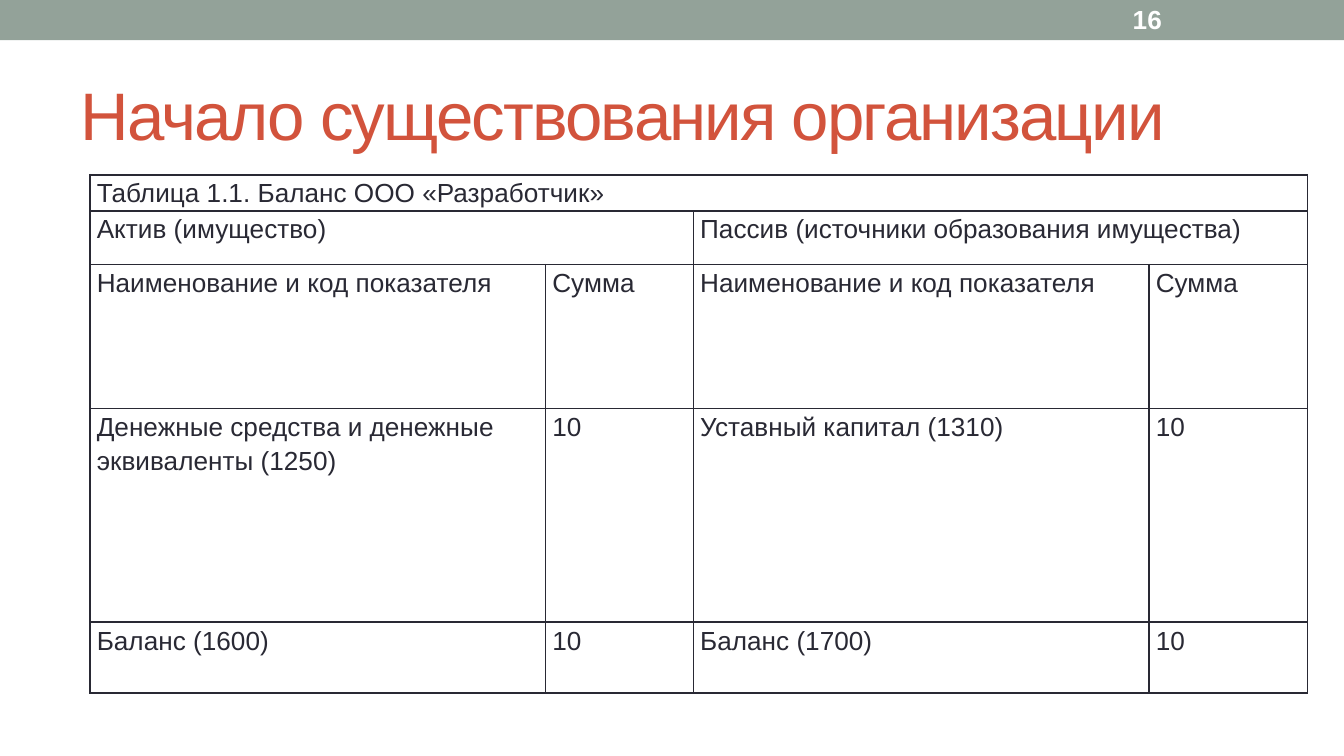
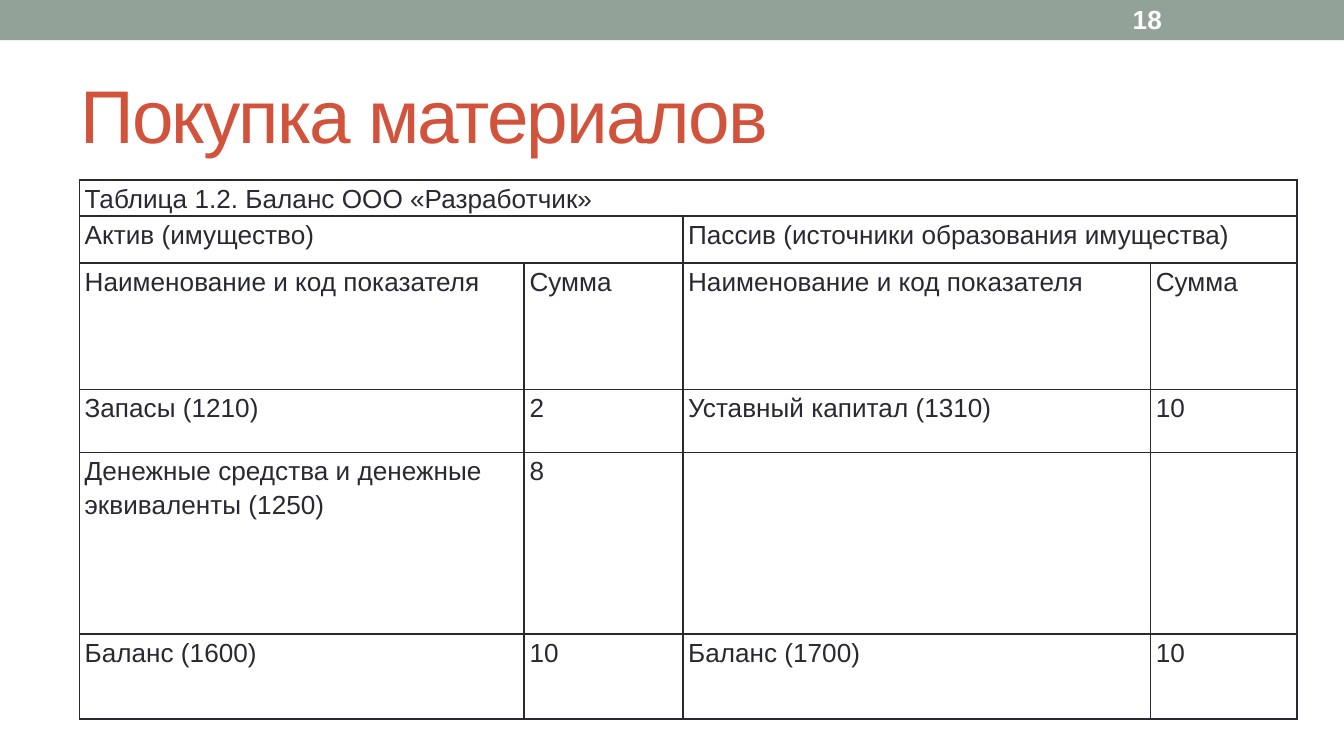
from lxml.etree import SubElement
from pptx import Presentation
from pptx.dml.color import RGBColor
from pptx.enum.shapes import MSO_SHAPE as SHAPE
from pptx.enum.text import MSO_ANCHOR as ANCHOR
from pptx.oxml.ns import qn
from pptx.util import Inches, Pt

BAND = RGBColor(0x93, 0xA2, 0x99)
ACCENT = RGBColor(0xD2, 0x53, 0x3C)
DARK = RGBColor(0x29, 0x29, 0x34)
WHITE = RGBColor(0xFF, 0xFF, 0xFF)
FONT = "Arial"

HEADINGS = ["Актив (имущество)", "", "Пассив (источники образования имущества)", ""]
COLUMNS = ["Наименование и код показателя", "Сумма"] * 2
CASH = "Денежные средства и денежные эквиваленты (1250)"
CAPITAL = ["Уставный капитал (1310)", "10"]
TOTALS = ["Баланс (1600)", "10", "Баланс (1700)", "10"]

# The caption row is set low and grows to fit its text
SLIDES = [
    {
        "number": "16", "title": "Начало существования организации", "size": 36,
        "caption": "Таблица 1.1. Баланс ООО «Разработчик»",
        "box": (0.67, 1.3, 9.06, 3.86), "inset": 0.05,
        "widths": [3.39, 1.1, 3.39, 1.18],
        "heights": [0.13, 0.4, 1.07, 1.59, 0.53],
        "items": [[CASH, "10", *CAPITAL]],
    },
    {
        "number": "18", "title": "Покупка материалов", "size": 40,
        "caption": "Таблица 1.2. Баланс ООО «Разработчик»",
        "box": (0.59, 1.34, 9.06, 4.01), "inset": 0.04,
        "widths": [3.31, 1.18, 3.48, 1.09],
        "heights": [0, 0.35, 0.94, 0.47, 1.35, 0.63],
        "items": [["Запасы (1210)", "2", *CAPITAL], [CASH, "8", "", ""]],
    },
]


def add_text(s, box, text, size, color, bold=False):
    tf = s.shapes.add_textbox(*map(Inches, box)).text_frame
    tf.word_wrap = True
    tf.vertical_anchor = ANCHOR.MIDDLE
    tf.text = text
    r = tf.paragraphs[0].runs[0]
    r.font.name, r.font.size, r.font.bold = FONT, Pt(size), bold
    r.font.color.rgb = color
    return r


def format_cell(cell, inset):
    cell.margin_left = cell.margin_right = Inches(inset)
    cell.margin_top = cell.margin_bottom = 0
    p = cell.text_frame.paragraphs[0]
    p.line_spacing, p.space_after = 1.15, Pt(10)
    for r in p.runs:
        r.font.name, r.font.size = FONT, Pt(14)
        r.font.color.rgb = DARK
    # Borders come before the fill in the cell properties
    tcPr = cell._tc.get_or_add_tcPr()
    for side in ("a:lnL", "a:lnR", "a:lnT", "a:lnB"):
        ln = SubElement(tcPr, qn(side), w=str(Pt(1)))
        SubElement(SubElement(ln, qn("a:solidFill")), qn("a:srgbClr"), val=str(DARK))
    cell.fill.background()


# Widescreen, 16:9
prs = Presentation()
prs.slide_width = Inches(10)
prs.slide_height = Inches(10) * 9 // 16

for data in SLIDES:
    s = prs.slides.add_slide(prs.slide_layouts[6])

    # Top band
    sp = s.shapes.add_shape(SHAPE.RECTANGLE, 0, 0, prs.slide_width, Inches(0.3))
    sp.shadow.inherit = False
    sp.fill.solid()
    sp.fill.fore_color.rgb = BAND
    sp.line.fill.background()

    # Title with tightened letters
    r = add_text(s, (0.5, 0.44, 9, 0.81), data["title"], data["size"], ACCENT)
    r.font._element.set("spc", "-100")

    # Balance sheet
    rows = [[data["caption"], "", "", ""], HEADINGS, COLUMNS, *data["items"], TOTALS]
    widths, heights = data["widths"], data["heights"]
    frame = s.shapes.add_table(len(rows), len(widths), *map(Inches, data["box"]))
    table = frame.table
    table.first_row = table.horz_banding = False
    for column, width in zip(table.columns, widths):
        column.width = Inches(width)
    for i, (row, height) in enumerate(zip(rows, heights)):
        table.rows[i].height = Inches(height)
        for j, text in enumerate(row):
            cell = table.cell(i, j)
            cell.text_frame.text = text
            format_cell(cell, data["inset"])
    for row, first, last in ((0, 0, 3), (1, 0, 1), (1, 2, 3)):
        table.cell(row, first).merge(table.cell(row, last))

    # Slide number
    add_text(s, (8.33, 0.01, 1.17, 0.27), data["number"], 14, WHITE, bold=True)

prs.save("out.pptx")
